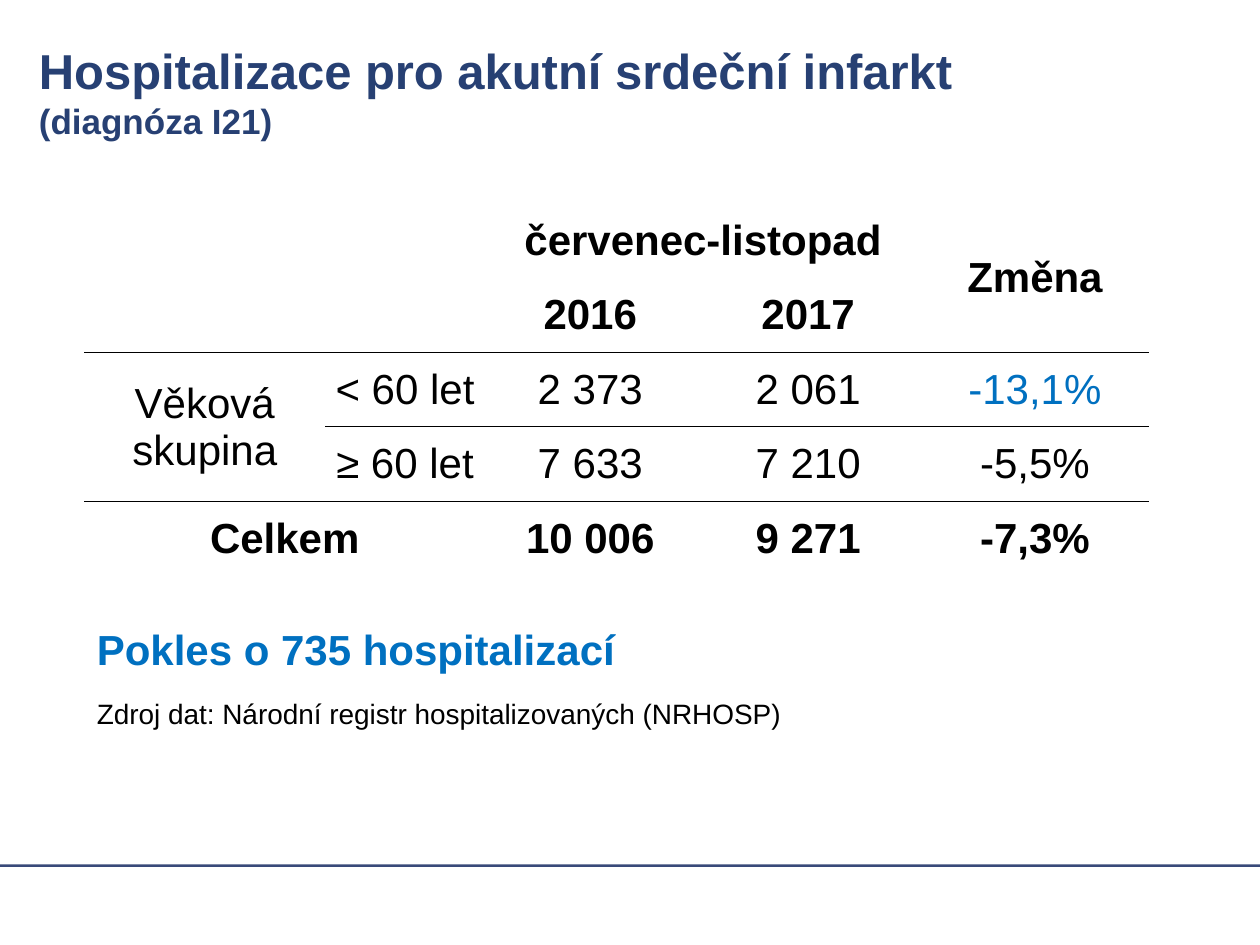
from pptx import Presentation, util as u
from pptx.dml import color
from pptx.enum import shapes, text
from pptx.oxml import parse_xml, ns

COLUMNS, ROWS = 100, 75
UNIT = u.Inches(10) // COLUMNS
NAVY, BLUE, BLACK = "274073", "0070C0", "000000"
NO_STYLE = "{2D5ABB26-0587-4C30-8999-92F81FD0307C}"

WIDTHS = [19.1, 12.7, 16.7, 17.9, 18.1]
CELLS = [
    ["", "", "červenec-listopad", "", "Změna"],
    ["", "", "2016", "2017", ""],
    ["Věková skupina", "< 60 let", "2 373", "2 061", "-13,1%"],
    ["", "≥ 60 let", "7 633", "7 210", "-5,5%"],
    ["Celkem", "", "10 006", "9 271", "-7,3%"],
]
MERGES = [((0, 2), (0, 3)), ((0, 4), (1, 4)), ((2, 0), (3, 0)), ((4, 0), (4, 1))]
BOLD_ROWS = {0, 1, 4}
RULED_ROWS = {1: "lnB", 2: "lnT", 3: "lnB", 4: "lnT"}


def grid(*counts):
    """Turn counts of grid units into slide lengths."""
    return [round(count * UNIT) for count in counts]


def rgb(value):
    """Turn a hex string into a colour."""
    return color.RGBColor.from_string(value)


def set_all(target, values):
    """Set each attribute in a dict of format values."""
    for name, value in values.items():
        setattr(target, name, value)


def add_span(para, words, size, shade=BLACK, bold=False):
    """Add one formatted span to a paragraph."""
    span = para.add_run()
    span.text = words
    set_all(span.font, {"name": "Arial", "size": u.Pt(size), "bold": bold})
    span.font.color.rgb = rgb(shade)


def add_box(page, box, spans, **frame_values):
    """Place a text box with one line for each span."""
    frame = page.shapes.add_textbox(*grid(*box)).text_frame
    set_all(frame, {"word_wrap": True, **frame_values})
    para = frame.paragraphs[0]
    for index, span in enumerate(spans):
        if index:
            para.add_line_break()
        add_span(para, *span)


def add_rule(page, box):
    """Place the thin footer rule."""
    rule = page.shapes.add_shape(shapes.MSO_SHAPE.RECTANGLE, *grid(*box))
    rule.shadow.inherit = False
    rule.fill.solid()
    rule.fill.fore_color.rgb = rgb("394A79")
    rule.line.fill.background()


def add_border(cell, side):
    """Draw a thin black line on one side of a cell."""
    line = parse_xml(
        f'<a:{side} {ns.nsdecls("a")} w="6350"><a:solidFill>'
        f'<a:srgbClr val="{BLACK}"/></a:solidFill></a:{side}>')
    cell._tc.get_or_add_tcPr().insert(0, line)


def add_counts(page, box):
    """Place the table of admissions by age group."""
    table = page.shapes.add_table(len(CELLS), len(WIDTHS), *grid(*box)).table
    set_all(table, {"first_row": False, "horz_banding": False})
    table._tbl.tblPr.find(ns.qn("a:tableStyleId")).text = NO_STYLE
    for column, width in zip(table.columns, grid(*WIDTHS)):
        column.width = width
    for first, last in MERGES:
        table.cell(*first).merge(table.cell(*last))
    margin = u.Inches(0.01)
    layout = {"margin_left": margin, "margin_right": margin, "margin_top": margin,
              "margin_bottom": 0, "vertical_anchor": text.MSO_ANCHOR.MIDDLE}
    for row, line in enumerate(CELLS):
        for column, words in enumerate(line):
            cell = table.cell(row, column)
            set_all(cell, layout)
            cell.fill.background()
            if row in RULED_ROWS:
                add_border(cell, RULED_ROWS[row])
            if words:
                para = cell.text_frame.paragraphs[0]
                para.alignment = text.PP_ALIGN.CENTER
                shade = BLUE if (row, column) == (2, 4) else BLACK
                add_span(para, words, 24, shade, row in BOLD_ROWS)


def main():
    """Build and save the slide."""
    deck = Presentation()
    set_all(deck, {"slide_width": COLUMNS * UNIT, "slide_height": ROWS * UNIT})
    page = deck.slides.add_slide(deck.slide_layouts[6])
    add_rule(page, (0, 68.6, COLUMNS, 0.2))
    add_box(page, (2.1, 3.2, 97.9, 7.1),
            [("Hospitalizace pro akutní srdeční infarkt", 28, NAVY, True),
             ("(diagnóza I21)", 20, NAVY, True)], margin_top=0, margin_bottom=0)
    add_counts(page, (6.7, 16.1, sum(WIDTHS), 29.6))
    add_box(page, (6.7, 49, 78.1, 5), [("Pokles o 735 hospitalizací", 24, BLUE, True)])
    add_box(page, (6.7, 54.8, 89.7, 3.7),
            [("Zdroj dat: Národní registr hospitalizovaných (NRHOSP)", 16)])
    deck.save("out.pptx")


if __name__ == "__main__":
    main()
